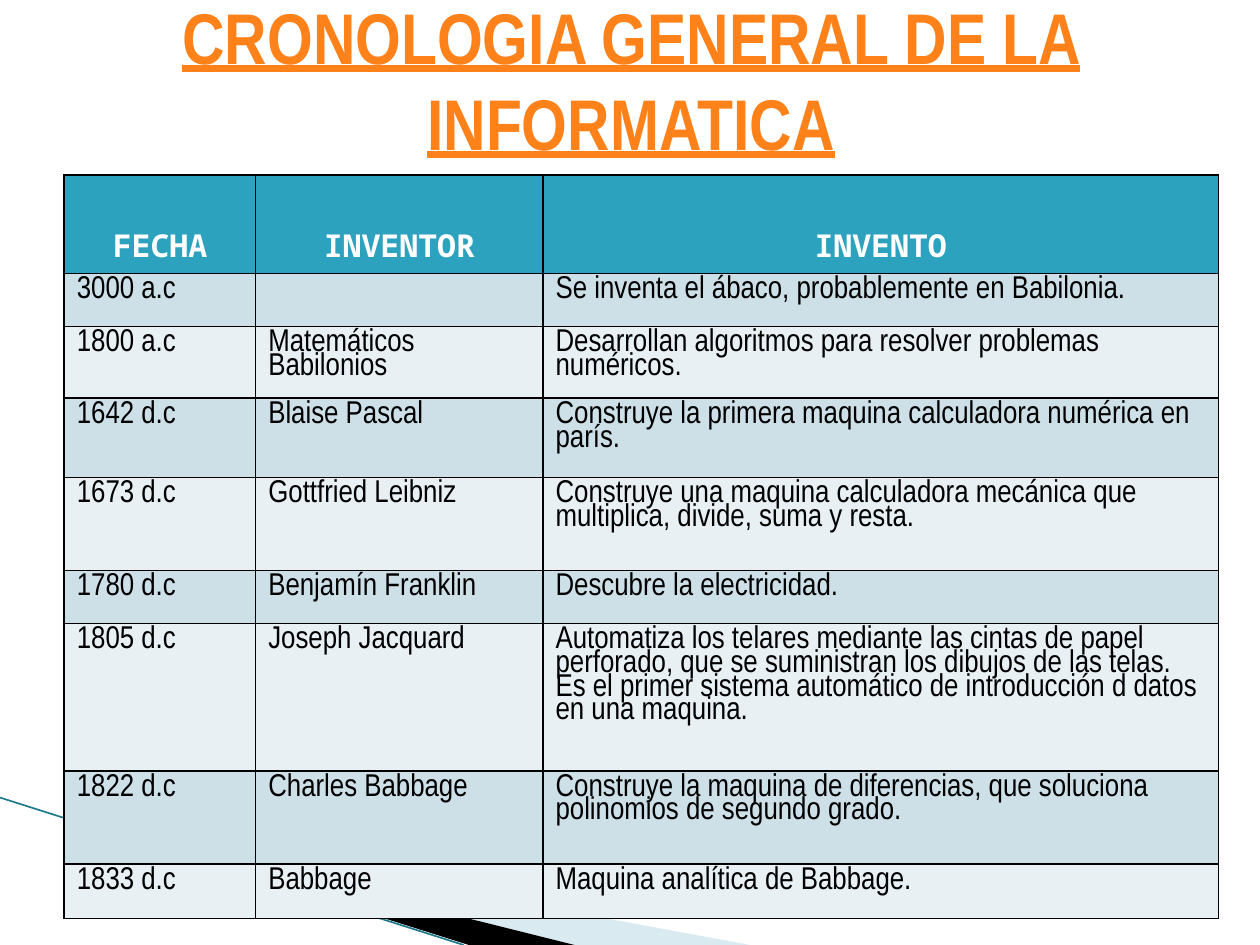
from lxml import etree
from pptx import Presentation
from pptx import util as u
from pptx.dml.color import RGBColor
from pptx.enum import text
from pptx.enum import shapes
from pptx.oxml import ns

COLORS = {
    "title": "FF8119", "header": "2DA2BF", "header_text": "FFFFFF",
    "odd": "CDE0E8", "even": "E8F0F4", "ink": "000000",
    "wedge": "A0CBDC", "edge": "1F7A8C",
}
BODY_FONT, HEADER_FONT = "Arial Narrow", "Noto Sans Mono"
COL_WIDTHS = [1.52, 2.28, 5.36]
ROW_HEIGHTS = [0.78, 0.42, 0.57, 0.63, 0.74, 0.42, 1.17, 0.74, 0.43]
ROWS = [
    ("FECHA", "INVENTOR", "INVENTO"),
    ("3000 a.c", "", "Se inventa el ábaco, probablemente en Babilonia."),
    ("1800 a.c", "Matemáticos Babilonios",
     "Desarrollan algoritmos para resolver problemas numéricos."),
    ("1642 d.c", "Blaise Pascal",
     "Construye la primera maquina calculadora numérica en parís."),
    ("1673 d.c", "Gottfried Leibniz",
     "Construye una maquina calculadora mecánica que multiplica, divide, suma y resta."),
    ("1780 d.c", "Benjamín Franklin", "Descubre la electricidad."),
    ("1805 d.c", "Joseph Jacquard",
     "Automatiza los telares mediante las cintas de papel perforado, que se "
     "suministran los dibujos de las telas. Es el primer sistema automático "
     "de introducción d datos en una maquina."),
    ("1822 d.c", "Charles Babbage",
     "Construye la maquina de diferencias, que soluciona polinomios de segundo grado."),
    ("1833 d.c", "Babbage", "Maquina analítica de Babbage."),
]


def rgb(name):
    return RGBColor.from_string(COLORS[name])


def style(font, name, size, color, bold=False):
    font.name, font.size, font.bold = name, u.Pt(size), bold
    font.color.rgb = rgb(color)


def add_wedge(s, points, color, alpha=None):
    start, *rest = [(u.Inches(x), u.Inches(y)) for x, y in points]
    builder = s.shapes.build_freeform(*start)
    builder.add_line_segments(rest, close=True)
    sp = builder.convert_to_shape()
    sp.shadow.inherit = False
    sp.fill.solid()
    sp.fill.fore_color.rgb = rgb(color)
    sp.line.fill.background()
    if alpha is not None:
        clr = sp.fill._xPr.find(".//" + ns.qn("a:srgbClr"))
        etree.SubElement(clr, ns.qn("a:alpha"), val=str(alpha * 1000))


def add_corner(s, left, top, bottom):
    add_wedge(s, [(left, top), (left + 5.4, bottom), (left + 4.01, bottom)],
              "wedge", 40)
    add_wedge(s, [(left, top), (left + 4.01, bottom), (left + 3.17, bottom)], "ink")
    edge = s.shapes.add_connector(
        shapes.MSO_CONNECTOR.STRAIGHT, 0, u.Inches(6.33),
        u.Inches(left + 3.13), u.Inches(bottom))
    edge.line.color.rgb = rgb("edge")
    edge.line.width = u.Pt(0.95)
    etree.SubElement(edge._element.spPr, ns.qn("a:effectLst"))


def add_title(s, left, top, width, height):
    sp = s.shapes.title
    sp.left, sp.top = u.Inches(left), u.Inches(top)
    sp.width, sp.height = u.Inches(width), u.Inches(height)
    tf = sp.text_frame
    tf.text = "CRONOLOGIA GENERAL DE LA INFORMATICA"
    tf.auto_size = text.MSO_AUTO_SIZE.NONE
    tf.vertical_anchor = text.MSO_ANCHOR.MIDDLE
    p = tf.paragraphs[0]
    p.alignment = text.PP_ALIGN.CENTER
    r = p.runs[0]
    style(r.font, BODY_FONT, 41, "title", True)
    r.font.underline = True


def add_borders(cell):
    tcPr = cell._tc.get_or_add_tcPr()
    for i, side in enumerate(("lnL", "lnR", "lnT", "lnB")):
        ln = etree.Element(ns.qn("a:" + side), w=str(u.Pt(1)))
        fill = etree.SubElement(ln, ns.qn("a:solidFill"))
        etree.SubElement(fill, ns.qn("a:srgbClr"), val=COLORS["ink"])
        tcPr.insert(i, ln)


def fill_cell(cell, value, row):
    header = row == 0
    cell.fill.solid()
    cell.fill.fore_color.rgb = rgb("header" if header else "odd" if row % 2 else "even")
    add_borders(cell)
    cell.text = value
    p = cell.text_frame.paragraphs[0]
    if header:
        cell.vertical_anchor = text.MSO_ANCHOR.BOTTOM
        p.alignment = text.PP_ALIGN.CENTER
        style(p.font, HEADER_FONT, 18, "header_text", True)
    else:
        p.line_spacing = 0.8
        style(p.font, BODY_FONT, 18, "ink")
    for r in p.runs:
        style(r.font, p.font.name, 18, "header_text" if header else "ink", header)


def add_timeline(s, left, top):
    table = s.shapes.add_table(
        len(ROWS), len(COL_WIDTHS), u.Inches(left), u.Inches(top),
        u.Inches(sum(COL_WIDTHS)), u.Inches(sum(ROW_HEIGHTS))).table
    for col, width in zip(table.columns, COL_WIDTHS):
        col.width = u.Inches(width)
    for i, (height, values) in enumerate(zip(ROW_HEIGHTS, ROWS)):
        table.rows[i].height = u.Inches(height)
        for j, value in enumerate(values):
            fill_cell(table.cell(i, j), value, i)


def main():
    prs = Presentation()
    prs.slide_width, prs.slide_height = u.Inches(10), u.Inches(7.5)
    s = prs.slides.add_slide(prs.slide_layouts[5])
    add_corner(s, 0.55, 6.5, 7.5)
    add_title(s, 0.51, 0, 9, 1.25)
    add_timeline(s, 0.51, 1.39)
    prs.save("out.pptx")


if __name__ == "__main__":
    main()
